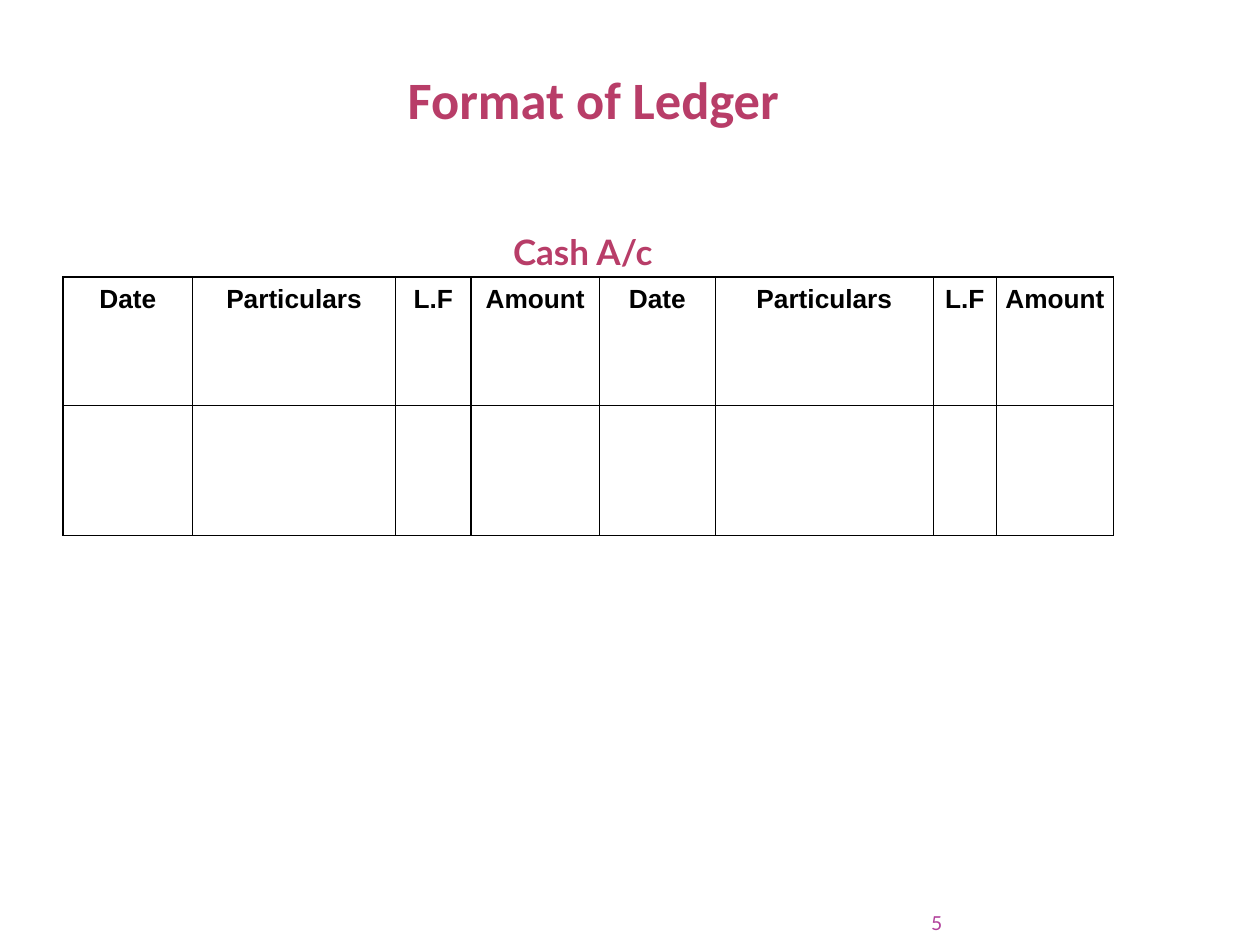
from dataclasses import dataclass

from lxml import etree
from pptx import Presentation
from pptx.dml.color import RGBColor
from pptx.enum.text import MSO_ANCHOR, PP_ALIGN
from pptx.oxml.ns import qn
from pptx.util import Pt

CENTER, RIGHT = PP_ALIGN.CENTER, PP_ALIGN.RIGHT
BOTTOM = MSO_ANCHOR.BOTTOM
COLORS = {"heading": "B83D68", "number": "B13F9A", "ink": "000000"}
HEADERS = ["Date", "Particulars", "L.F", "Amount"] * 2
COLUMN_WIDTHS = [74.1, 115.9, 43.2, 73.4, 66.2, 124.6, 36, 67]
ROW_HEIGHTS = [73.4, 74.2]


@dataclass(frozen=True)
class Style:
    font: str
    size: float
    color: str
    bold: bool = True
    align: PP_ALIGN = CENTER


@dataclass(frozen=True)
class Label:
    text: str
    left: float
    top: float
    width: float
    height: float
    style: Style
    inset_x: float = 0
    inset_y: float = 0


LABELS = [
    Label("5", 492.5, 516.2, 46, 18, Style("Lato", 11, "number", False, RIGHT)),
    Label("Format of Ledger", 30.2, 18, 617.8, 59.8,
          Style("Calibri", 30, "heading"), 7.2, 3.6),
    Label("Cash A/c", 36, 95.8, 594, 59.8, Style("Lato", 20, "heading"), 3.6),
]
HEADER_STYLE = Style("Arial", 15, "ink")


def write(paragraph, text: str, style: Style) -> None:
    """Add one styled run to a paragraph."""
    paragraph.alignment = style.align
    run = paragraph.add_run()
    run.text = text
    run.font.name = style.font
    run.font.size = Pt(style.size)
    run.font.bold = style.bold
    run.font.color.rgb = RGBColor.from_string(COLORS[style.color])


def draw_label(slide, label: Label) -> None:
    """Draw a bottom-anchored text box."""
    box = slide.shapes.add_textbox(
        Pt(label.left), Pt(label.top), Pt(label.width), Pt(label.height))
    frame = box.text_frame
    frame.word_wrap = True
    frame.vertical_anchor = BOTTOM
    frame.margin_left = frame.margin_right = Pt(label.inset_x)
    frame.margin_top = frame.margin_bottom = Pt(label.inset_y)
    write(frame.paragraphs[0], label.text, label.style)


def draw_borders(cell) -> None:
    """Give a cell a thin line on all four sides."""
    properties = cell._tc.get_or_add_tcPr()
    for position, side in enumerate(("a:lnL", "a:lnR", "a:lnT", "a:lnB")):
        line = etree.Element(qn(side), w=str(Pt(1)))
        fill = etree.SubElement(line, qn("a:solidFill"))
        etree.SubElement(fill, qn("a:srgbClr"), val=COLORS["ink"])
        properties.insert(position, line)


def draw_ledger(slide) -> None:
    """Draw the two-sided ledger with an empty entry row."""
    ledger = slide.shapes.add_table(
        len(ROW_HEIGHTS), len(HEADERS), Pt(36), Pt(158.4),
        Pt(sum(COLUMN_WIDTHS)), Pt(sum(ROW_HEIGHTS))).table
    ledger.first_row = ledger.horz_banding = False
    for column, width in zip(ledger.columns, COLUMN_WIDTHS):
        column.width = Pt(width)
    for row, height in zip(ledger.rows, ROW_HEIGHTS):
        row.height = Pt(height)
    for cell in ledger.iter_cells():
        cell.fill.background()
        cell.margin_left = cell.margin_right = Pt(5)
        cell.margin_top = cell.margin_bottom = Pt(0)
        draw_borders(cell)
    for cell, header in zip(ledger.rows[0].cells, HEADERS):
        paragraph = cell.text_frame.paragraphs[0]
        paragraph.line_spacing = 1.25
        write(paragraph, header, HEADER_STYLE)


def main() -> None:
    """Build and save the ledger slide."""
    deck = Presentation()
    deck.slide_width, deck.slide_height = Pt(720), Pt(540)
    slide = deck.slides.add_slide(deck.slide_layouts[6])
    for label in LABELS:
        draw_label(slide, label)
    draw_ledger(slide)
    deck.save("out.pptx")


if __name__ == "__main__":
    main()
